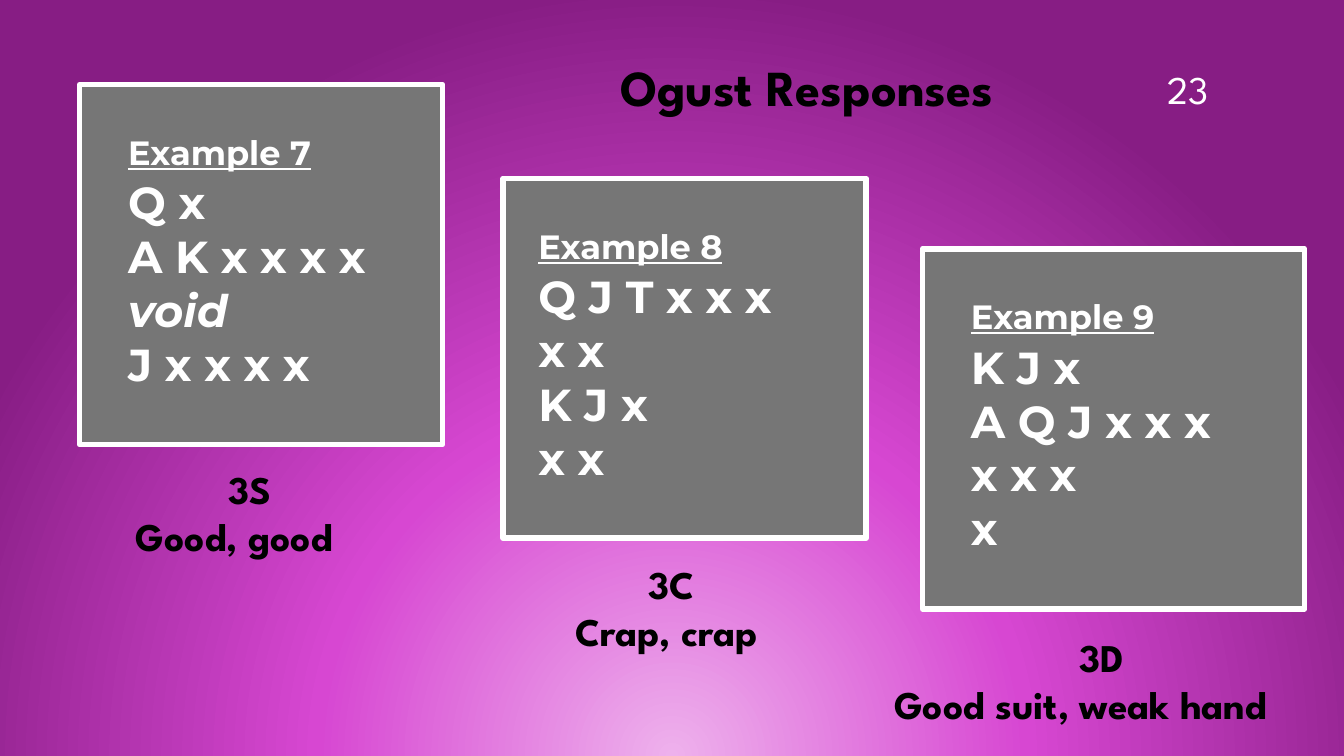
from collections import namedtuple
from dataclasses import dataclass

from pptx import Presentation
from pptx.dml.color import RGBColor
from pptx.enum.shapes import MSO_SHAPE as Shape
from pptx.enum.text import MSO_ANCHOR as Anchor, MSO_AUTO_SIZE as AutoSize, PP_ALIGN as Align
from pptx.oxml import parse_xml
from pptx.oxml.ns import nsdecls, qn
from pptx.util import Inches, Pt

Example = namedtuple("Example", "heading hand card inset bid verdict label bid_indent")

TITLE = "Ogust Responses"
NUMBER = "23"
VOID = "void"
EXAMPLES = [
    Example("Example 7", ["Q x", "A K x x x x", VOID, "J x x x x"],
            (0.79, 0.84, 3.6), 0.48, "3S", "Good, good", (1.25, 4.57, 2.85), 0.92),
    Example("Example 8", ["Q J T x x x", "x x", "K J x", "x x"],
            (4.99, 1.77, 3.6), 0.35, "3C", "Crap, crap", (5.61, 5.51, 2.37), 0.72),
    Example("Example 9", ["K J x", "A Q J x x x", "x x x", "x"],
            (9.15, 2.47, 3.79), 0.48, "3D", "Good suit, weak hand", (8.77, 6.23, 4.49), 1.84),
]
CARD_HEIGHT = 3.57
CARD_TOP_INSET = 0.47
LABEL_HEIGHT = 1.04


@dataclass(frozen=True)
class Theme:
    display: str = "League Spartan"
    body: str = "Montserrat"
    white: str = "FFFFFF"
    black: str = "000000"
    card: str = "767676"
    glow: tuple = ((0, "EEB1EC"), (46, "D747D2"), (100, "871D84"))
    title_size: int = 36
    label_size: int = 28
    heading_size: int = 24
    hand_size: int = 32
    border: int = 4


THEME = Theme()


def write(frame, text, *, font, size, color, bold=True, italic=False, underline=False,
          align=Align.LEFT, indent=0, after=0):
    para = frame.paragraphs[0]
    if para.runs:
        para = frame.add_paragraph()
    para.alignment = align
    para.space_after = Pt(after)
    if indent:
        para._p.get_or_add_pPr().set("marL", str(Inches(indent)))
    span = para.add_run()
    span.text = text
    span.font.name = font
    span.font.size = Pt(size)
    span.font.color.rgb = RGBColor.from_string(color)
    span.font.bold = bold
    span.font.italic = italic
    span.font.underline = underline


def paint_background(page):
    page.background.fill.solid()
    stops = "".join(f'<a:gs pos="{place * 1000}"><a:srgbClr val="{color}"/></a:gs>'
                    for place, color in THEME.glow)
    gradient = parse_xml(
        f'<a:gradFill {nsdecls("a")} rotWithShape="1"><a:gsLst>{stops}</a:gsLst>'
        '<a:path path="circle"><a:fillToRect l="50000" t="130000" r="50000" b="-30000"/>'
        '</a:path></a:gradFill>')
    properties = page.element.find(".//" + qn("p:bgPr"))
    properties.replace(properties[0], gradient)


def add_text_box(page, left, top, width, height):
    box = page.shapes.add_textbox(Inches(left), Inches(top), Inches(width), Inches(height))
    box.text_frame.word_wrap = True
    return box.text_frame


def add_title(page):
    title = page.shapes.title
    title.left, title.top, title.width, title.height = map(Inches, (6.05, 0.51, 4.67, 0.71))
    frame = title.text_frame
    frame.auto_size = AutoSize.NONE
    frame.vertical_anchor = Anchor.TOP
    write(frame, TITLE, font=THEME.display, size=THEME.title_size, color=THEME.black)


def add_number(page):
    frame = add_text_box(page, 11.32, 0.32, 0.92, 0.84)
    frame.vertical_anchor = Anchor.BOTTOM
    write(frame, NUMBER, font=THEME.display, size=THEME.label_size, color=THEME.white,
          bold=False, align=Align.CENTER)


def add_card(page, example):
    left, top, width = map(Inches, example.card)
    card = page.shapes.add_shape(Shape.RECTANGLE, left, top, width, Inches(CARD_HEIGHT))
    card.shadow.inherit = False
    card.fill.solid()
    card.fill.fore_color.rgb = RGBColor.from_string(THEME.card)
    card.line.color.rgb = RGBColor.from_string(THEME.white)
    card.line.width = Pt(THEME.border)
    frame = card.text_frame
    frame.word_wrap = True
    frame.vertical_anchor = Anchor.TOP
    frame.margin_left = Inches(example.inset)
    frame.margin_top = Inches(CARD_TOP_INSET)
    write(frame, example.heading, font=THEME.body, size=THEME.heading_size,
          color=THEME.white, underline=True, after=2)
    for suit in example.hand:
        write(frame, suit, font=THEME.body, size=THEME.hand_size, color=THEME.white,
              italic=suit == VOID)


def add_label(page, example):
    frame = add_text_box(page, *example.label, LABEL_HEIGHT)
    for text, indent in ((example.bid, example.bid_indent), (example.verdict, 0)):
        write(frame, text, font=THEME.display, size=THEME.label_size, color=THEME.black,
              indent=indent)


def main():
    """Build the bidding examples slide and save it."""
    deck = Presentation()
    deck.slide_width, deck.slide_height = Inches(13.33), Inches(7.5)
    page = deck.slides.add_slide(deck.slide_layouts[5])
    paint_background(page)
    add_title(page)
    add_number(page)
    for example in EXAMPLES:
        add_card(page, example)
        add_label(page, example)
    deck.save("out.pptx")


if __name__ == "__main__":
    main()
